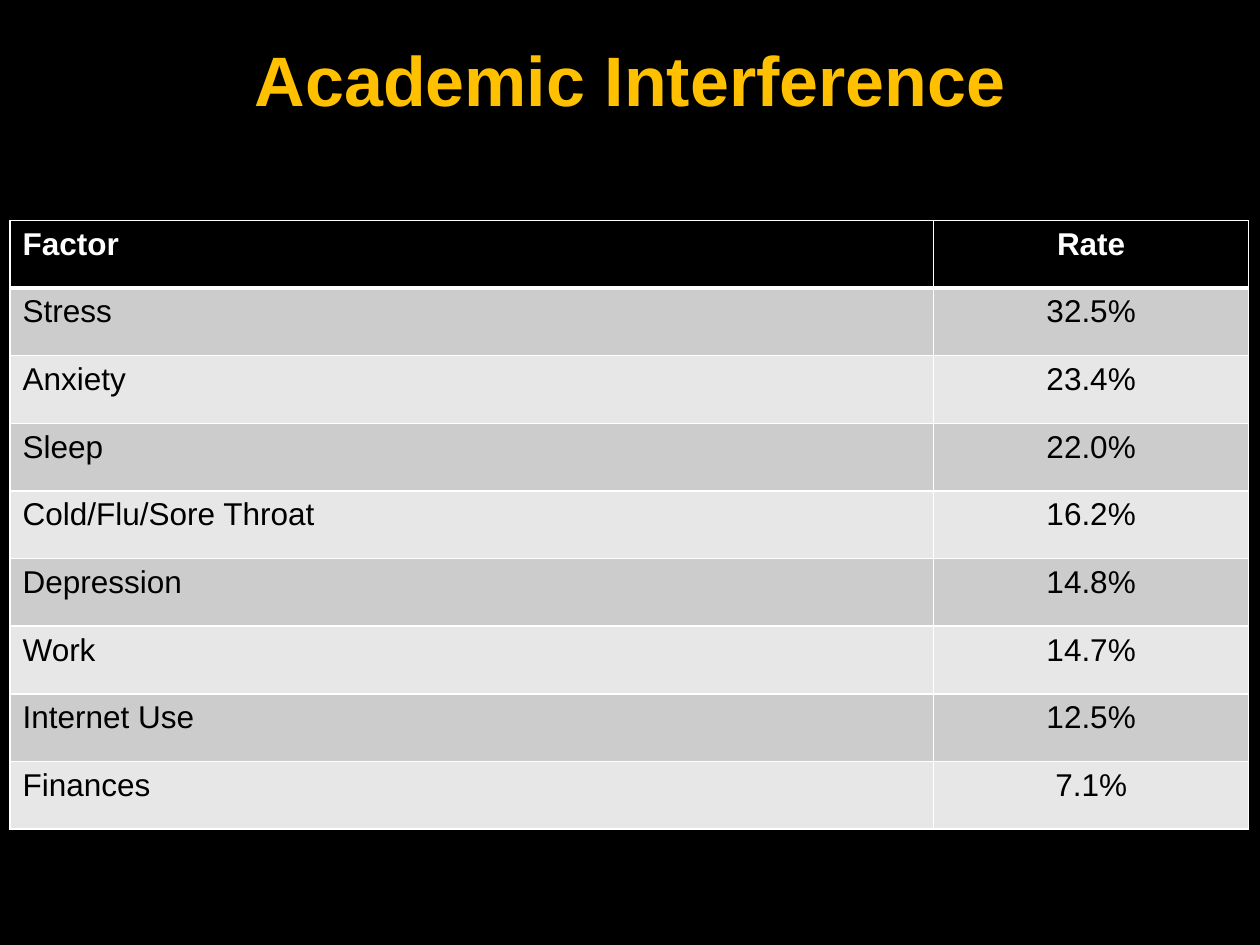
import lxml.etree
import pptx
import pptx.dml.color
import pptx.enum.text
import pptx.oxml.ns
import pptx.util

COLOURS = {
    "background": "000000",
    "title": "FFC000",
    "header": "000000",
    "header text": "FFFFFF",
    "body text": "000000",
    "dark band": "CCCCCC",
    "light band": "E7E7E7",
    "border": "FFFFFF",
}
ALIGN = pptx.enum.text.PP_ALIGN
ANCHOR = pptx.enum.text.MSO_ANCHOR

ROWS = [
    ("Factor", "Rate"),
    ("Stress", "32.5%"),
    ("Anxiety", "23.4%"),
    ("Sleep", "22.0%"),
    ("Cold/Flu/Sore Throat", "16.2%"),
    ("Depression", "14.8%"),
    ("Work", "14.7%"),
    ("Internet Use", "12.5%"),
    ("Finances", "7.1%"),
]
COLUMN_WIDTHS = (7.33, 2.5)
COLUMN_ALIGNS = (ALIGN.LEFT, ALIGN.CENTER)
TABLE_LEFT, TABLE_TOP, TABLE_HEIGHT = 0.08, 1.75, 4.83


def write_text(frame, text, size, colour, bold=False, align=ALIGN.LEFT):
    para = frame.paragraphs[0]
    para.alignment = align
    span = para.add_run()
    span.text = text
    span.font.name = "Arial"
    span.font.size = pptx.util.Pt(size)
    span.font.bold = bold
    span.font.color.rgb = pptx.dml.color.RGBColor.from_string(COLOURS[colour])


def set_borders(cell, top=1, bottom=1):
    """Draw the four cell borders, with widths in points."""
    qn = pptx.oxml.ns.qn
    properties = cell._tc.get_or_add_tcPr()
    sides = {"lnL": 1, "lnR": 1, "lnT": top, "lnB": bottom}
    for position, (side, width) in enumerate(sides.items()):
        line = lxml.etree.Element(qn(f"a:{side}"), w=str(pptx.util.Pt(width)))
        fill = lxml.etree.SubElement(line, qn("a:solidFill"))
        lxml.etree.SubElement(fill, qn("a:srgbClr"), val=COLOURS["border"])
        properties.insert(position, line)


deck = pptx.Presentation()
deck.slide_width = pptx.util.Inches(10)
deck.slide_height = pptx.util.Inches(7.5)
page = deck.slides.add_slide(deck.slide_layouts.get_by_name("Title Only"))
page.background.fill.solid()
page.background.fill.fore_color.rgb = pptx.dml.color.RGBColor.from_string(COLOURS["background"])

title = page.shapes.title
title.left, title.width = int(deck.slide_width * 0.05), int(deck.slide_width * 0.9)
title.top, title.height = 0, deck.slide_height // 6
title.text_frame.vertical_anchor = ANCHOR.MIDDLE
write_text(title.text_frame, "Academic Interference", size=40, colour="title",
           bold=True, align=ALIGN.CENTER)

table = page.shapes.add_table(
    len(ROWS), len(COLUMN_WIDTHS),
    pptx.util.Inches(TABLE_LEFT), pptx.util.Inches(TABLE_TOP),
    pptx.util.Inches(sum(COLUMN_WIDTHS)), pptx.util.Inches(TABLE_HEIGHT),
).table
for column, width in zip(table.columns, COLUMN_WIDTHS):
    column.width = pptx.util.Inches(width)

for row, texts in enumerate(ROWS):
    is_header = row == 0
    band = "header" if is_header else "dark band" if row % 2 else "light band"
    for column, text in enumerate(texts):
        cell = table.cell(row, column)
        cell.fill.solid()
        cell.fill.fore_color.rgb = pptx.dml.color.RGBColor.from_string(COLOURS[band])
        set_borders(cell, top=3 if row == 1 else 1, bottom=3 if is_header else 1)
        write_text(cell.text_frame, text, size=18, bold=is_header,
                   colour="header text" if is_header else "body text",
                   align=COLUMN_ALIGNS[column])

deck.save("out.pptx")
